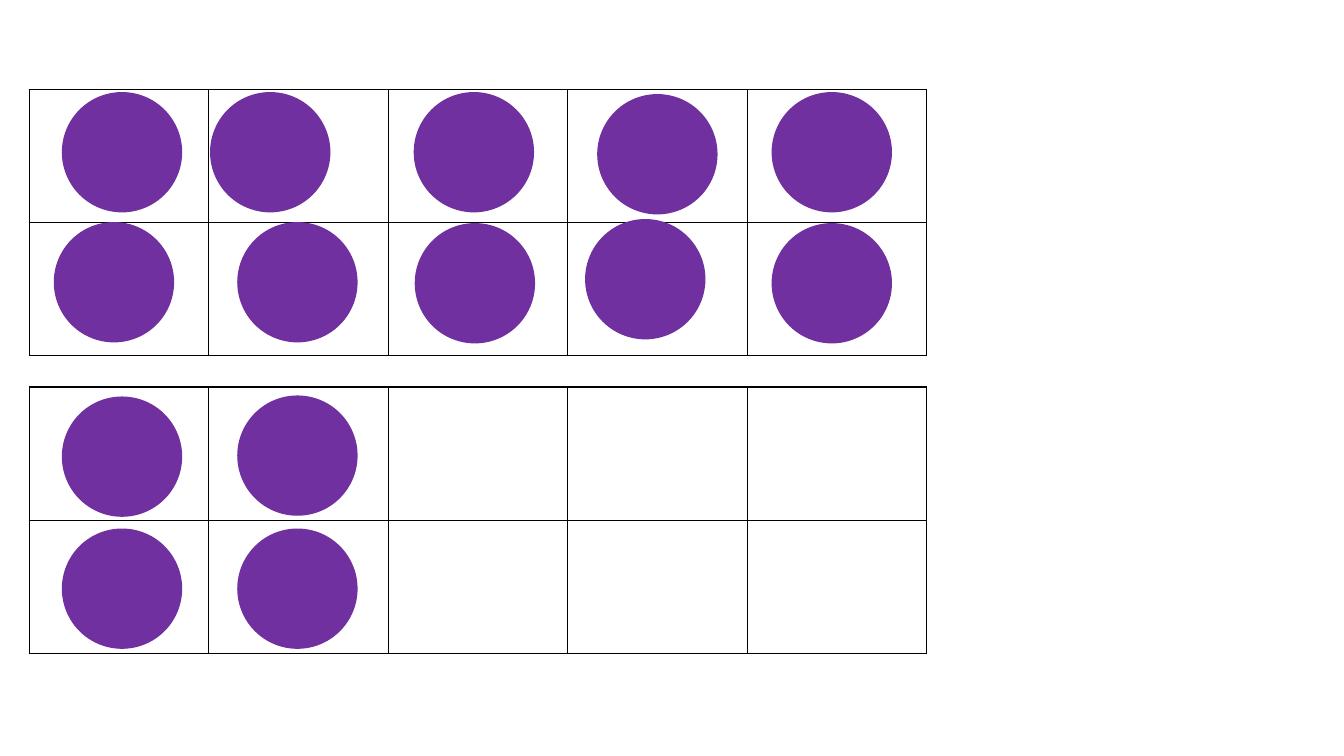
from dataclasses import dataclass

from lxml.etree import SubElement
from pptx import Presentation
from pptx.dml.color import RGBColor
from pptx.enum.shapes import MSO_SHAPE as Preset
from pptx.oxml.ns import qn
from pptx.util import Pt

PX = 9144
COLUMNS, ROWS = 5, 2
COUNTER_SIZE = 118


@dataclass(frozen=True)
class Theme:
    counter: str = "7030A0"
    grid: str = "000000"
    line_width: int = 1


@dataclass(frozen=True)
class Box:
    left: int
    top: int
    width: int
    height: int


THEME = Theme()
FULL_FRAME = Box(29, 89, 890, 264)
PARTIAL_FRAME = Box(29, 384, 890, 264)
FULL_COUNTERS = [
    (33, 3), (180, 3), (382, 3), (564, 5), (737, 3),
    (25, 132), (207, 132), (383, 133), (552, 129), (737, 133),
]
PARTIAL_COUNTERS = [(33, 10), (207, 9), (33, 141), (207, 141)]


def px(*lengths):
    return [length * PX for length in lengths]


def outline_cell(cell):
    properties = cell._tc.get_or_add_tcPr()
    for side in ("a:lnL", "a:lnR", "a:lnT", "a:lnB"):
        border = SubElement(properties, qn(side), w=str(Pt(THEME.line_width)))
        fill = SubElement(border, qn("a:solidFill"))
        SubElement(fill, qn("a:srgbClr"), val=THEME.grid)
    cell.fill.background()


def add_grid(page, box):
    frame = page.shapes.add_table(
        ROWS, COLUMNS, *px(box.left, box.top, box.width, box.height))
    table = frame.table
    table.first_row = False
    table.horz_banding = False
    for cell in table.iter_cells():
        outline_cell(cell)


def add_counter(page, left, top):
    counter = page.shapes.add_shape(
        Preset.OVAL, *px(left, top, COUNTER_SIZE, COUNTER_SIZE))
    counter.shadow.inherit = False
    counter.fill.solid()
    counter.fill.fore_color.rgb = RGBColor.from_string(THEME.counter)
    counter.line.color.rgb = RGBColor.from_string(THEME.counter)
    counter.line.width = Pt(THEME.line_width)


def add_ten_frame(page, box, counters):
    add_grid(page, box)
    for across, down in counters:
        add_counter(page, box.left + across, box.top + down)


def main():
    deck = Presentation()
    deck.slide_width, deck.slide_height = px(1333, 750)
    page = deck.slides.add_slide(deck.slide_layouts[6])
    add_ten_frame(page, FULL_FRAME, FULL_COUNTERS)
    add_ten_frame(page, PARTIAL_FRAME, PARTIAL_COUNTERS)
    deck.save("out.pptx")


if __name__ == "__main__":
    main()
